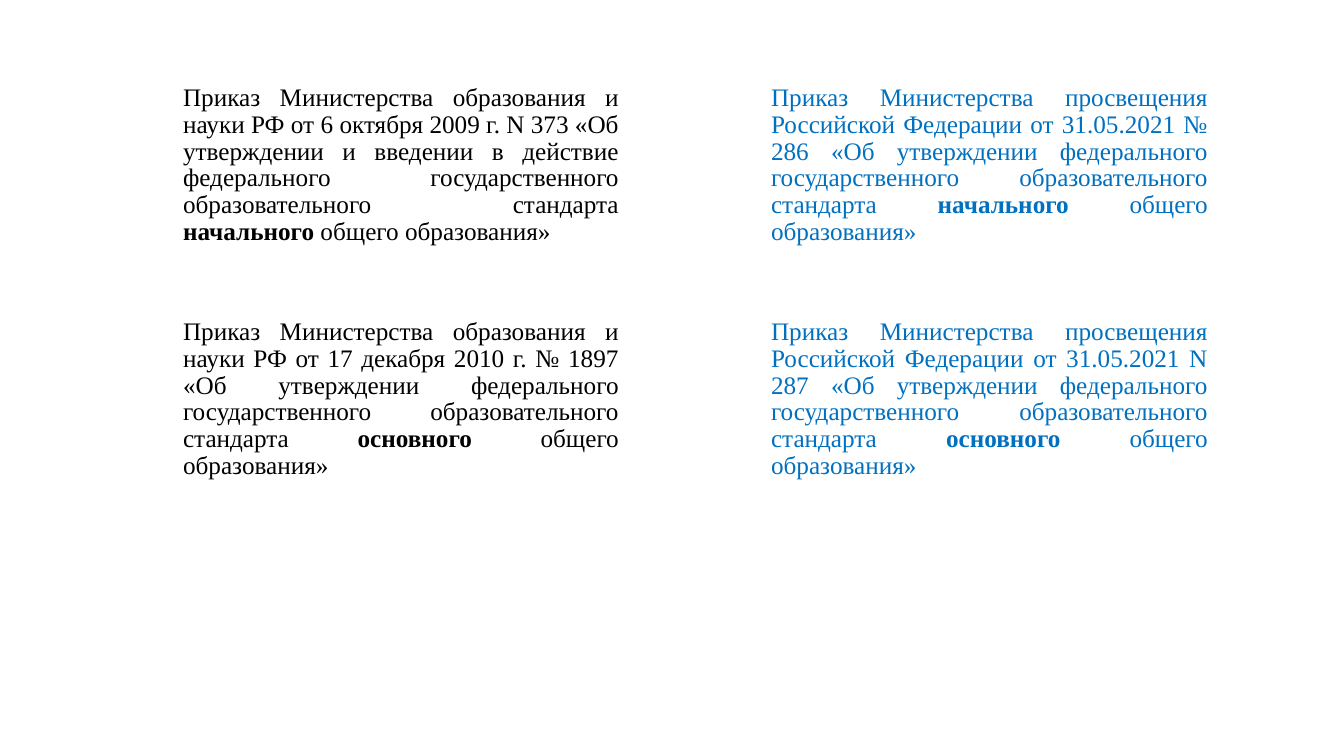
from dataclasses import dataclass

from pptx import Presentation
from pptx import util as u
from pptx.dml.color import RGBColor
from pptx.enum import text

EMU_PER_PX = 914400 / 100.8


@dataclass(frozen=True)
class Theme:
    font: str = "Times New Roman"
    size: int = 18
    line_spacing: float = 0.96
    former: str = "000000"
    current: str = "0070C0"


THEME = Theme()
COLUMN_WIDTHS = (456, 132, 457)
ROW_HEIGHTS = (234, 240)
COLUMN_COLORS = {0: THEME.former, 2: THEME.current}

# Each order: opening words, emphasised level of education.
ORDERS = {
    (0, 0): ("Приказ Министерства образования и науки РФ от 6 октября 2009 г. N 373 "
             "«Об утверждении и введении в действие федерального", "начального"),
    (0, 2): ("Приказ Министерства просвещения Российской Федерации от 31.05.2021 № 286 "
             "«Об утверждении федерального", "начального"),
    (1, 0): ("Приказ Министерства образования и науки РФ от 17 декабря 2010 г. № 1897 "
             "«Об утверждении федерального", "основного"),
    (1, 2): ("Приказ Министерства просвещения Российской Федерации от 31.05.2021 N 287 "
             "«Об утверждении федерального", "основного"),
}


def px(length):
    return u.Emu(round(length * EMU_PER_PX))


def add_span(para, words, *, color, bold=False):
    span = para.add_run()
    span.text = words
    span.font.name = THEME.font
    span.font.size = u.Pt(THEME.size)
    span.font.bold = bold
    span.font.color.rgb = RGBColor.from_string(color)


def write_order(cell, opening, level, color):
    para = cell.text_frame.paragraphs[0]
    para.alignment = text.PP_ALIGN.JUSTIFY
    para.line_spacing = THEME.line_spacing
    add_span(para, f"{opening} государственного образовательного стандарта ", color=color)
    add_span(para, level, color=color, bold=True)
    add_span(para, " общего образования»", color=color)


def add_plain_table(page, left, top):
    """Add a table without banding, header style or cell fills."""
    frame = page.shapes.add_table(
        len(ROW_HEIGHTS), len(COLUMN_WIDTHS), px(left), px(top),
        px(sum(COLUMN_WIDTHS)), px(sum(ROW_HEIGHTS)))
    table = frame.table
    table.first_row = False
    table.horz_banding = False
    for column, width in zip(table.columns, COLUMN_WIDTHS):
        column.width = px(width)
    for row, height in zip(table.rows, ROW_HEIGHTS):
        row.height = px(height)
    for cell in table.iter_cells():
        cell.fill.background()
    return table


def main():
    deck = Presentation()
    deck.slide_width, deck.slide_height = px(1344), px(756)
    page = deck.slides.add_slide(deck.slide_layouts[6])
    table = add_plain_table(page, 173, 80)
    for (row, column), (opening, level) in ORDERS.items():
        write_order(table.cell(row, column), opening, level, COLUMN_COLORS[column])
    deck.save("out.pptx")


if __name__ == "__main__":
    main()
